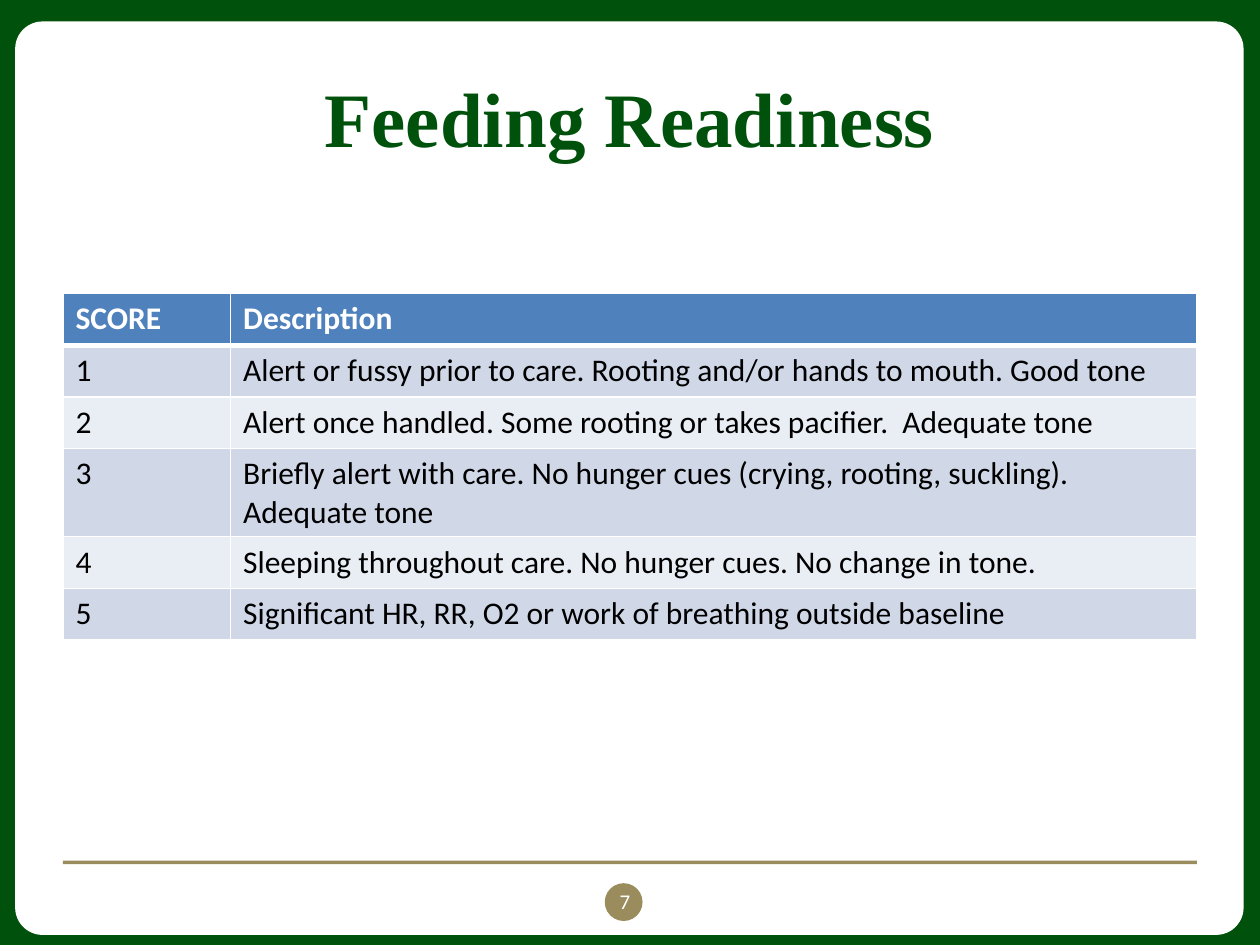
from dataclasses import dataclass

from lxml.etree import SubElement
from pptx import Presentation
from pptx.dml.color import RGBColor
from pptx.enum.shapes import MSO_SHAPE
from pptx.enum.text import MSO_ANCHOR, PP_ALIGN
from pptx.oxml.ns import qn
from pptx.util import Inches, Pt


@dataclass(frozen=True)
class Theme:
    green: str = "00510B"
    gold: str = "9A8C5C"
    white: str = "FFFFFF"
    black: str = "000000"
    header: str = "4F81BD"
    bands: tuple = ("D0D8E8", "E9EDF4")
    title_font: str = "Times New Roman"
    body_font: str = "Calibri"
    title_size: int = 44
    table_size: int = 18
    number_size: int = 12


THEME = Theme()

SCORES = [
    ("SCORE", "Description"),
    ("1", "Alert or fussy prior to care. Rooting and/or hands to mouth. Good tone"),
    ("2", "Alert once handled. Some rooting or takes pacifier.  Adequate tone"),
    ("3", "Briefly alert with care. No hunger cues (crying, rooting, suckling). "
          "Adequate tone"),
    ("4", "Sleeping throughout care. No hunger cues. No change in tone."),
    ("5", "Significant HR, RR, O2 or work of breathing outside baseline"),
]
COLUMN_WIDTHS = (1.33, 7.67)
ROW_HEIGHT = 0.41


def set_fill(fill, color):
    fill.solid()
    fill.fore_color.rgb = RGBColor.from_string(color)


def add_run(paragraph, text, font, size, color, bold=False):
    run = paragraph.add_run()
    run.text = text
    run.font.name = font
    run.font.size = Pt(size)
    run.font.bold = bold
    run.font.color.rgb = RGBColor.from_string(color)


def add_panel(slide, kind, left, top, width, height, color):
    shape = slide.shapes.add_shape(
        kind, Inches(left), Inches(top), Inches(width), Inches(height))
    shape.shadow.inherit = False
    set_fill(shape.fill, color)
    shape.line.fill.background()
    return shape


def add_centred_text(slide, left, top, width, height, anchor, text, *style):
    box = slide.shapes.add_textbox(
        Inches(left), Inches(top), Inches(width), Inches(height))
    frame = box.text_frame
    frame.word_wrap = True
    frame.vertical_anchor = anchor
    paragraph = frame.paragraphs[0]
    paragraph.alignment = PP_ALIGN.CENTER
    add_run(paragraph, text, *style)


def set_borders(cell, widths):
    """Draw white borders; widths are points for left, right, top, bottom."""
    properties = cell._tc.get_or_add_tcPr()
    for side, width in zip("LRTB", widths):
        line = SubElement(properties, qn(f"a:ln{side}"), w=str(Pt(width)))
        solid = SubElement(line, qn("a:solidFill"))
        SubElement(solid, qn("a:srgbClr"), val=THEME.white)


def add_score_table(slide, left, top):
    table = slide.shapes.add_table(
        len(SCORES), len(COLUMN_WIDTHS), Inches(left), Inches(top),
        Inches(sum(COLUMN_WIDTHS)), Inches(ROW_HEIGHT * len(SCORES))).table
    for column, width in zip(table.columns, COLUMN_WIDTHS):
        column.width = Inches(width)
    for index, texts in enumerate(SCORES):
        table.rows[index].height = Inches(ROW_HEIGHT)
        is_header = index == 0
        fill = THEME.header if is_header else THEME.bands[(index - 1) % 2]
        color = THEME.white if is_header else THEME.black
        top_width = 3 if index == 1 else 1
        bottom_width = 3 if is_header else 1
        for cell, text in zip(table.rows[index].cells, texts):
            set_borders(cell, (1, 1, top_width, bottom_width))
            set_fill(cell.fill, fill)
            add_run(cell.text_frame.paragraphs[0], text, THEME.body_font,
                    THEME.table_size, color, is_header)


def main():
    presentation = Presentation()
    presentation.slide_width = Inches(10)
    presentation.slide_height = Inches(7.5)
    slide = presentation.slides.add_slide(presentation.slide_layouts[6])
    set_fill(slide.background.fill, THEME.green)

    page = add_panel(slide, MSO_SHAPE.ROUNDED_RECTANGLE,
                     0.12, 0.17, 9.75, 7.25, THEME.white)
    page.adjustments[0] = 0.03
    add_panel(slide, MSO_SHAPE.OVAL, 4.8, 7.01, 0.3, 0.3, THEME.gold)
    add_panel(slide, MSO_SHAPE.RECTANGLE, 0.5, 6.83, 9, 0.03, THEME.gold)

    add_centred_text(slide, 0.5, 0.3, 9, 1.25, MSO_ANCHOR.MIDDLE,
                     "Feeding Readiness", THEME.title_font,
                     THEME.title_size, THEME.green, True)
    add_score_table(slide, 0.5, 2.33)
    add_centred_text(slide, 4.75, 7, 0.42, 0.35, MSO_ANCHOR.TOP, "7",
                     THEME.body_font, THEME.number_size, THEME.white)
    presentation.save("out.pptx")


if __name__ == "__main__":
    main()
